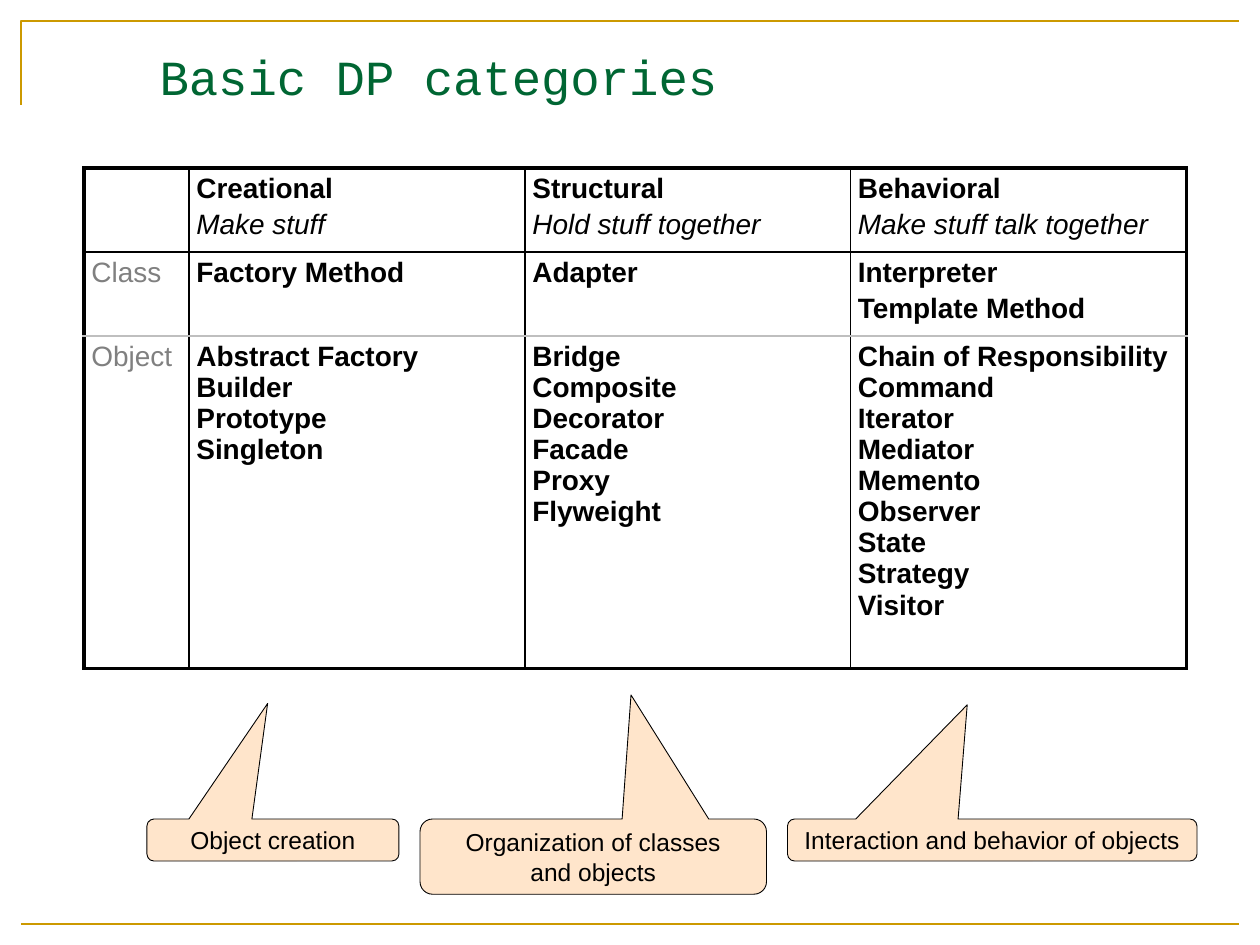
from dataclasses import dataclass

from lxml.etree import SubElement
from pptx import Presentation
from pptx.dml.color import RGBColor
from pptx.enum.shapes import MSO_CONNECTOR, MSO_SHAPE
from pptx.enum.text import MSO_ANCHOR, MSO_AUTO_SIZE, PP_ALIGN
from pptx.oxml.ns import qn
from pptx.util import Pt


@dataclass(frozen=True)
class Theme:
    title_font: str = "Courier New"
    body_font: str = "Arial"
    title_size: float = 28
    table_size: float = 16
    callout_size: float = 14
    green: str = "006633"
    gold: str = "CC9900"
    black: str = "000000"
    grey: str = "808080"
    light_grey: str = "BFBFBF"
    peach: str = "FFCC99"
    thin: float = 0.96
    thick: float = 2.21


THEME = Theme()
COLUMNS = [60, 192, 186, 192]
ROWS = [48, 48, 190]
CATEGORIES = [
    [[], ["Creational", "Make stuff"], ["Structural", "Hold stuff together"],
     ["Behavioral", "Make stuff talk together"]],
    [["Class"], ["Factory Method"], ["Adapter"], ["Interpreter", "Template Method"]],
    [["Object"],
     ["Abstract Factory\nBuilder\nPrototype\nSingleton"],
     ["Bridge\nComposite\nDecorator\nFacade\nProxy\nFlyweight"],
     ["Chain of Responsibility Command\nIterator\nMediator\nMemento\n"
      "Observer\nState\nStrategy\nVisitor"]],
]
CALLOUTS = [
    ("Object creation", (84, 468, 144, 24), (-0.021, -3.25)),
    ("Organization of classes\nand objects", (240, 468, 198, 43), (0.109, -2.149)),
    ("Interaction and behavior of objects", (450, 468, 234, 24), (-0.061, -3.219)),
]


def style_font(font, name, size, color, bold=False, italic=False):
    font.name, font.size = name, Pt(size)
    font.bold, font.italic = bold, italic
    font.color.rgb = RGBColor.from_string(color)


def set_margins(target):
    target.margin_left = target.margin_right = Pt(4.3)
    target.margin_top = target.margin_bottom = Pt(2.9)


def style_line(line, color, width):
    line.color.rgb = RGBColor.from_string(color)
    line.width = Pt(width)


def add_frame(s, box):
    x, y, w, h = box
    builder = s.shapes.build_freeform(Pt(x), Pt(y + 48))
    builder.add_line_segments([(Pt(x), Pt(y)), (Pt(x + w), Pt(y))], close=False)
    corner = builder.convert_to_shape()
    corner.shadow.inherit = False
    corner.fill.background()
    rule = s.shapes.add_connector(
        MSO_CONNECTOR.STRAIGHT, Pt(x), Pt(y + h), Pt(x + w), Pt(y + h))
    SubElement(rule._element.spPr, qn("a:effectLst"))
    for sp in (corner, rule):
        style_line(sp.line, THEME.gold, 1.5)


def add_title(s, box, text):
    sp = s.shapes.title
    sp.left, sp.top, sp.width, sp.height = map(Pt, box)
    tf = sp.text_frame
    tf.auto_size = MSO_AUTO_SIZE.NONE
    tf.vertical_anchor = MSO_ANCHOR.BOTTOM
    tf.margin_bottom = 0
    p = tf.paragraphs[0]
    p.text = text
    p.alignment = PP_ALIGN.LEFT
    style_font(p.font, THEME.title_font, THEME.title_size, THEME.green)


def set_border(cell, side, color, width):
    ln = SubElement(cell._tc.get_or_add_tcPr(), qn(f"a:ln{side}"), w=str(Pt(width)))
    fill = SubElement(ln, qn("a:solidFill"))
    SubElement(fill, qn("a:srgbClr"), val=color)


def fill_cell(cell, row, col, lines):
    last_row, last_col = len(ROWS) - 1, len(COLUMNS) - 1
    edges = {"L": col == 0, "R": col == last_col, "T": row == 0, "B": row == last_row}
    for side, outer in edges.items():
        divider = (row, side) in ((1, "B"), (2, "T"))
        set_border(cell, side, THEME.light_grey if divider else THEME.black,
                   THEME.thick if outer else THEME.thin)
    cell.fill.background()
    set_margins(cell)
    tf = cell.text_frame
    for i, line in enumerate(lines):
        p = tf.add_paragraph() if i else tf.paragraphs[0]
        p.text = line
        if i:
            p.space_before = Pt(3.2)
        tagline = row == 0 and i == 1
        style_font(p.font, THEME.body_font, THEME.table_size,
                   THEME.black if col else THEME.grey,
                   bold=col > 0 and not tagline, italic=tagline)


def add_categories(s, x, y):
    box = map(Pt, (x, y, sum(COLUMNS), sum(ROWS)))
    table = s.shapes.add_table(len(ROWS), len(COLUMNS), *box).table
    table.first_row = table.horz_banding = False
    for column, width in zip(table.columns, COLUMNS):
        column.width = Pt(width)
    for row, height in zip(table.rows, ROWS):
        row.height = Pt(height)
    for r, cells in enumerate(CATEGORIES):
        for c, lines in enumerate(cells):
            fill_cell(table.cell(r, c), r, c, lines)


def add_callout(s, text, box, tip):
    sp = s.shapes.add_shape(MSO_SHAPE.ROUNDED_RECTANGULAR_CALLOUT, *map(Pt, box))
    sp.shadow.inherit = False
    for i, value in enumerate((*tip, 0.167)):
        sp.adjustments[i] = value
    sp.fill.solid()
    sp.fill.fore_color.rgb = RGBColor.from_string(THEME.peach)
    color = sp._element.spPr.find(qn("a:solidFill")).find(qn("a:srgbClr"))
    SubElement(color, qn("a:alpha"), val="50000")
    style_line(sp.line, THEME.black, 0.5)
    tf = sp.text_frame
    tf.word_wrap = True
    tf.vertical_anchor = MSO_ANCHOR.MIDDLE
    set_margins(tf)
    p = tf.paragraphs[0]
    p.text = text
    p.alignment = PP_ALIGN.CENTER
    style_font(p.font, THEME.body_font, THEME.callout_size, THEME.black)


def main():
    prs = Presentation()
    prs.slide_width, prs.slide_height = Pt(720), Pt(540)
    s = prs.slides.add_slide(prs.slide_layouts[5])
    add_frame(s, (12, 12, 696, 516))
    add_title(s, (84, 18, 624, 42), "Basic DP categories")
    add_categories(s, 48, 96)
    for text, box, tip in CALLOUTS:
        add_callout(s, text, box, tip)
    prs.save("out.pptx")


if __name__ == "__main__":
    main()
